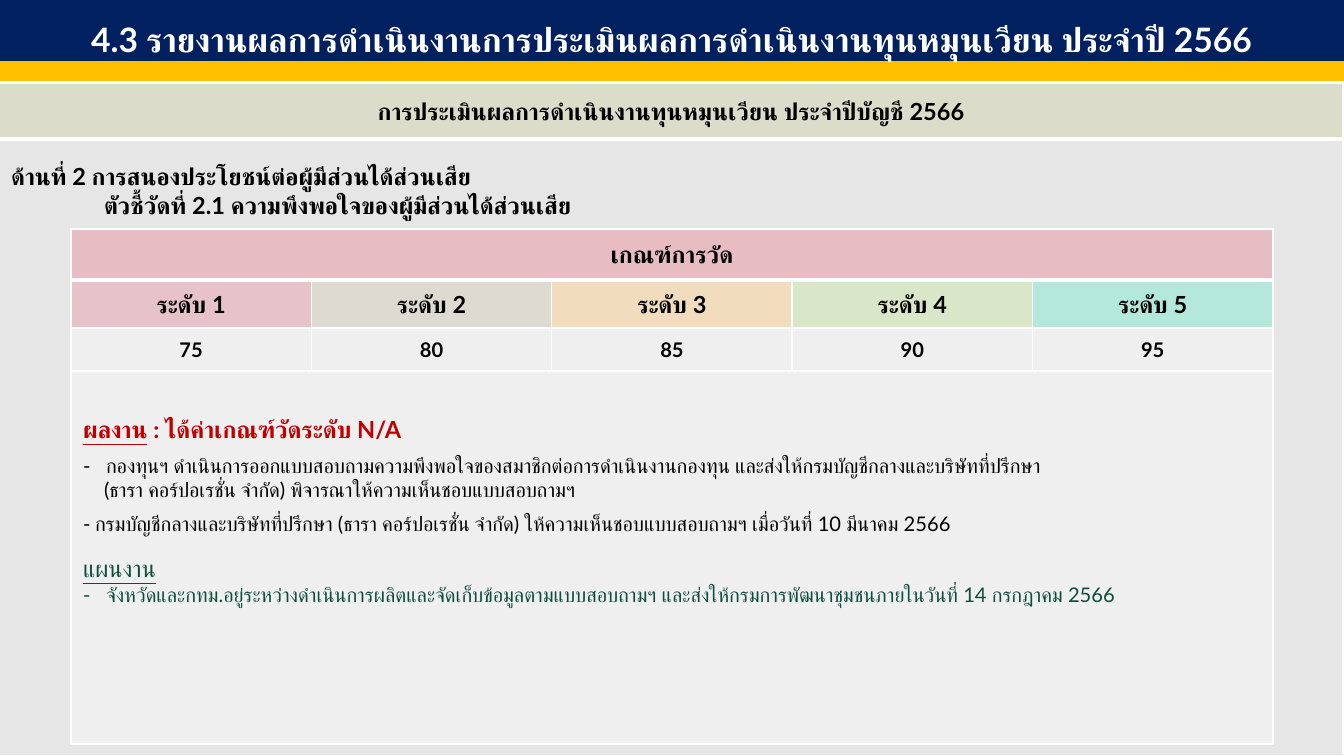
import pptx
import pptx.util
import pptx.dml.color
import pptx.enum.shapes
import pptx.enum.text
from pptx.oxml.ns import qn
from lxml import etree

FONT = "Lato"
BLACK, WHITE = "000000", "FFFFFF"
RED, GREEN = "C00000", "0E4D3C"
CENTER = pptx.enum.text.PP_ALIGN.CENTER
MIDDLE = pptx.enum.text.MSO_ANCHOR.MIDDLE

LEVELS = [("ระดับ 1", "75", "E8ABB5"), ("ระดับ 2", "80", "D6D2C4"), ("ระดับ 3", "85", "F9D8A3"),
          ("ระดับ 4", "90", "D1E6B5"), ("ระดับ 5", "95", "91EAD2")]


def px(length):
    return pptx.util.Emu(round(length * 914400 / 121))


def paint(color_format, color):
    color_format.rgb = pptx.dml.color.RGBColor.from_string(color)


def fill_shape(shape, color):
    shape.fill.solid()
    paint(shape.fill.fore_color, color)
    paint(shape.line.color, color)
    shape.line.width = pptx.util.Pt(1)


def place(shape, box):
    shape.left, shape.top, shape.width, shape.height = map(px, box)


def format_paragraph(paragraph, size, color=BLACK, bold=True, align=None,
                     spacing=None, after=0, indent=0, hanging=0):
    properties = paragraph._p.get_or_add_pPr()
    properties.set("marL", str(px(indent + hanging)))
    properties.set("indent", str(px(-hanging)))
    if hanging:
        etree.SubElement(properties, qn("a:buSzPts"), val=str(size * 100))
        etree.SubElement(properties, qn("a:buFont"), typeface=FONT)
        etree.SubElement(properties, qn("a:buChar"), char="-")
    paragraph.alignment = align
    paragraph.line_spacing = spacing
    paragraph.space_after = pptx.util.Pt(after)
    font = paragraph.font
    font.name, font.size, font.bold = FONT, pptx.util.Pt(size), bold
    paint(font.color, color)
    etree.SubElement(properties.find(qn("a:defRPr")), qn("a:cs"), typeface=FONT)


def add_paragraph(text_frame, runs, size, **style):
    first = text_frame.paragraphs[0]
    paragraph = text_frame.add_paragraph() if first.runs else first
    for text, underline in runs:
        run = paragraph.add_run()
        run.text = text
        if underline:
            run.font.underline = True
    format_paragraph(paragraph, size, **style)


def style_cell(cell, color, opacity=100, top=1, bottom=1):
    properties = cell._tc.get_or_add_tcPr()
    for side, width in (("L", 1), ("R", 1), ("T", top), ("B", bottom)):
        line = etree.SubElement(properties, qn("a:ln" + side), w=str(pptx.util.Pt(width)))
        solid = etree.SubElement(line, qn("a:solidFill"))
        etree.SubElement(solid, qn("a:srgbClr"), val=WHITE)
    cell.fill.solid()
    paint(cell.fill.fore_color, color)
    if opacity < 100:
        color_element = properties.find(qn("a:solidFill"))[0]
        etree.SubElement(color_element, qn("a:alpha"), val=str(opacity * 1000))


def write_centered(cell, text, size):
    cell.vertical_anchor = MIDDLE
    add_paragraph(cell.text_frame, [(text, False)], size, align=CENTER)


def add_plain_table(slide, box, row_heights, column_count):
    table = slide.shapes.add_table(len(row_heights), column_count, *map(px, box)).table
    table.first_row = table.horz_banding = False
    for row, height in zip(table.rows, row_heights):
        row.height = px(height)
    for column in table.columns:
        column.width = px(box[2] / column_count)
    return table


def add_header(slide, box):
    left, top, width, height = box
    stripe = slide.shapes.add_shape(pptx.enum.shapes.MSO_SHAPE.RECTANGLE,
                                    *map(px, (left, top + 63, width, 19)))
    stripe.shadow.inherit = False
    fill_shape(stripe, "FFC000")
    title = slide.shapes.title
    slide.shapes.element.append(title.element)
    place(title, (left, top, width, height))
    fill_shape(title, "002060")
    frame = title.text_frame
    frame.auto_size = pptx.enum.text.MSO_AUTO_SIZE.NONE
    frame.word_wrap = True
    frame.vertical_anchor = MIDDLE
    add_paragraph(frame, [("4.3 รายงานผลการดำเนินงานการประเมินผลการดำเนินงานทุนหมุนเวียน ประจำปี 2566", False)],
                  20, color=WHITE, align=CENTER, spacing=1.5)


def add_assessment(slide, box):
    heading_height = 56
    table = add_plain_table(slide, box, [heading_height, box[3] - heading_height], 1)
    heading, body = table.cell(0, 0), table.cell(1, 0)
    style_cell(heading, "DBDCC9", bottom=3)
    style_cell(body, "E7E6E6", top=3)
    for cell in (heading, body):
        cell.margin_top = cell.margin_bottom = px(9)
    write_centered(heading, "การประเมินผลการดำเนินงานทุนหมุนเวียน ประจำปีบัญชี 2566", 14)
    add_paragraph(body.text_frame, [("ด้านที่ 2 การสนองประโยชน์ต่อผู้มีส่วนได้ส่วนเสีย", False)],
                  14, spacing=1.5, after=0.5)
    add_paragraph(body.text_frame, [("ตัวชี้วัดที่ 2.1 ความพึงพอใจของผู้มีส่วนได้ส่วนเสีย", False)], 14, indent=93)


def add_results(cell):
    cell.margin_top = px(44)
    frame = cell.text_frame
    add_paragraph(frame, [("ผลงาน", True), (" : ได้ค่าเกณฑ์วัดระดับ N/A", False)], 14, color=RED, after=6)
    add_paragraph(frame, [("กองทุนฯ ดำเนินการออกแบบสอบถามความพึงพอใจของสมาชิกต่อการดำเนินงานกองทุน "
                           "และส่งให้กรมบัญชีกลางและบริษัทที่ปรึกษา", False)],
                  12, bold=False, hanging=23)
    add_paragraph(frame, [("(ธารา คอร์ปอเรชั่น จำกัด) พิจารณาให้ความเห็นชอบแบบสอบถามฯ", False)],
                  12, bold=False, after=6, indent=21)
    add_paragraph(frame, [("กรมบัญชีกลางและบริษัทที่ปรึกษา (ธารา คอร์ปอเรชั่น จำกัด) "
                           "ให้ความเห็นชอบแบบสอบถามฯ เมื่อวันที่ 10 มีนาคม 2566", False)],
                  12, bold=False, after=6, hanging=12)
    add_paragraph(frame, [("แผนงาน", True)], 14, color=GREEN, bold=False, spacing=1.3)
    add_paragraph(frame, [("จังหวัดและกทม.อยู่ระหว่างดำเนินการผลิตและจัดเก็บข้อมูลตามแบบสอบถามฯ "
                           "และส่งให้กรมการพัฒนาชุมชนภายในวันที่ 14 กรกฎาคม 2566", False)],
                  12, color=GREEN, bold=False, hanging=23)


def add_criteria(slide, box):
    table = add_plain_table(slide, box, [51, 48, 43, 373], len(LEVELS))
    for column, (level, score, color) in enumerate(LEVELS):
        style_cell(table.cell(0, column), "E8ABB5", 70, bottom=3)
        style_cell(table.cell(1, column), color, 60, top=3)
        style_cell(table.cell(2, column), "F2F2F2", 80)
        style_cell(table.cell(3, column), "F2F2F2", 80)
        write_centered(table.cell(1, column), level, 14)
        write_centered(table.cell(2, column), score, 12)
    for row in (0, 3):
        table.cell(row, 0).merge(table.cell(row, len(LEVELS) - 1))
    write_centered(table.cell(0, 0), "เกณฑ์การวัด", 14)
    add_results(table.cell(3, 0))


def main():
    presentation = pptx.Presentation()
    presentation.slide_width, presentation.slide_height = px(1344), px(756)
    slide = presentation.slides.add_slide(presentation.slide_layouts[5])
    add_header(slide, (-1, -2, 1345, 62))
    add_assessment(slide, (-1, 83, 1344, 673))
    add_criteria(slide, (71, 229, 1202, 515))
    presentation.save("out.pptx")


if __name__ == "__main__":
    main()
